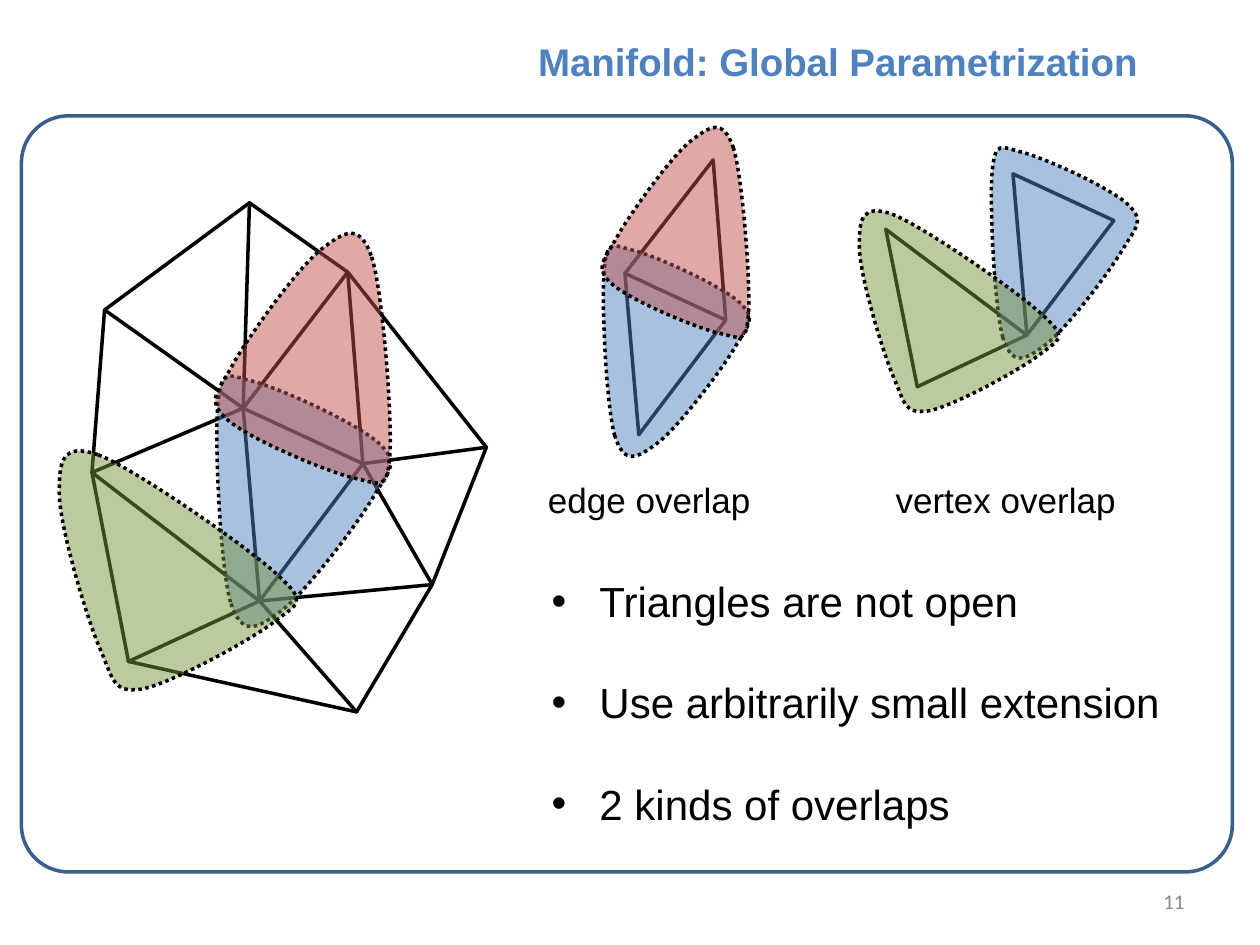
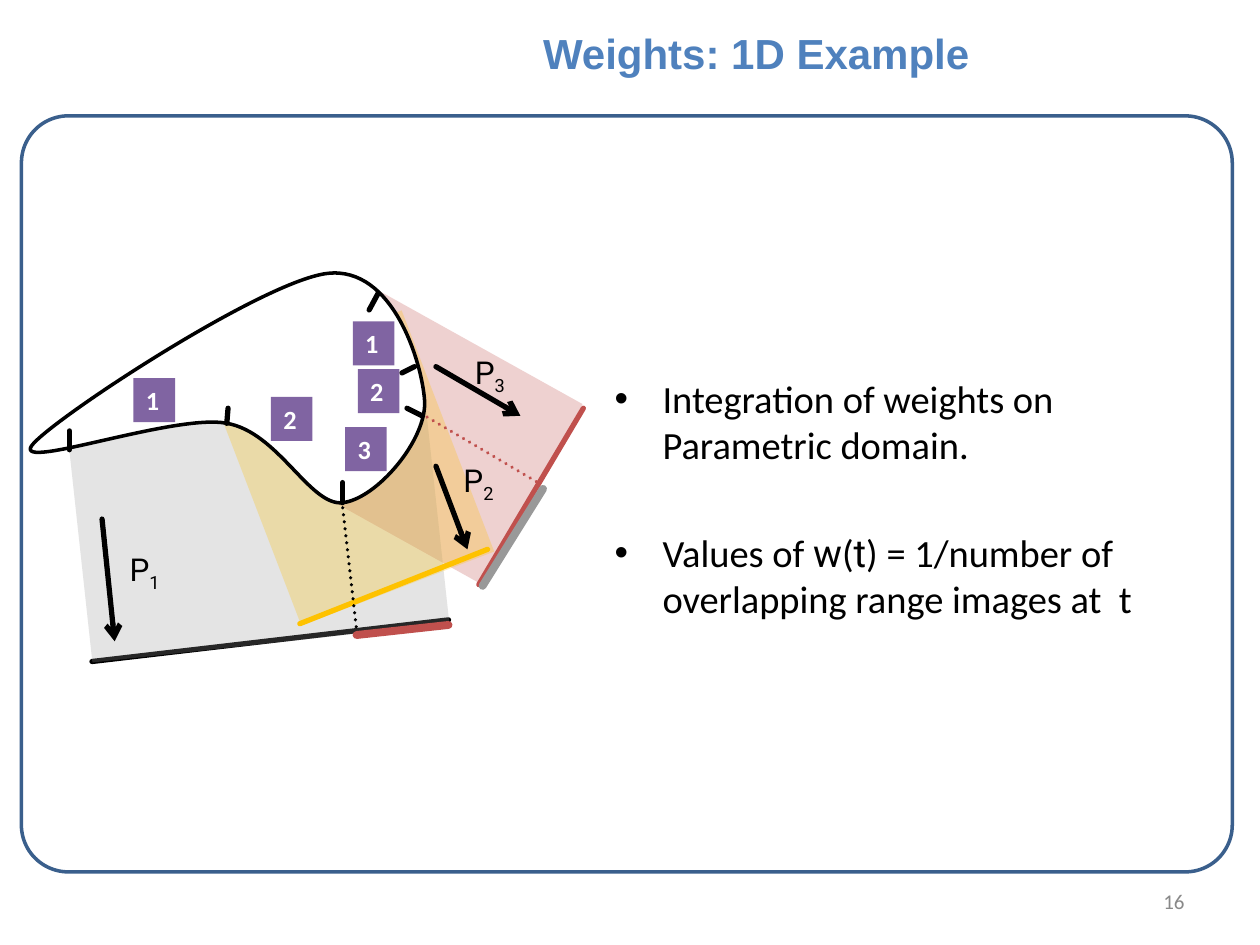
"""Build two slides on manifold parametrization and range image weights."""
import math
from dataclasses import dataclass

import lxml.etree
import pptx
import pptx.dml.color
import pptx.enum.dml
import pptx.enum.shapes
import pptx.enum.text
import pptx.oxml.ns
import pptx.util

Inches = pptx.util.Inches
qn = pptx.oxml.ns.qn


@dataclass(frozen=True)
class Theme:
    """Hold colours, fonts and type sizes."""

    black: str = "000000"
    white: str = "FFFFFF"
    title: str = "4F81BD"
    frame: str = "3A5F8C"
    number: str = "898989"
    blue: str = "4F81BD"
    red: str = "C0504D"
    green: str = "77933C"
    gray: str = "999999"
    amber: str = "FFC000"
    yellow: str = "FEC200"
    purple: str = "8064A2"
    sans: str = "Arial"
    body: str = "Calibri"
    symbol: str = "Roboto"
    number_size: int = 12
    badge_size: int = 15
    label_size: int = 18
    caption_size: int = 20
    text_size: int = 22
    large_size: int = 24
    thin: float = 2
    thick: float = 3
    heavy: float = 4.5
    chart_opacity: int = 49
    image_opacity: int = 26


THEME = Theme()

LENS = [(1.83, 4.78),
        (1.75, 4.51), (1.7, 3.49), (1.73, 3.2), (1.76, 2.91), (1.81, 2.98), (2.02, 3.03),
        (2.24, 3.09), (2.86, 3.37), (3.02, 3.53), (3.17, 3.68), (3.09, 3.73), (2.96, 3.95),
        (2.83, 4.17), (2.42, 4.71), (2.23, 4.85), (2.04, 4.99), (1.92, 5.06), (1.83, 4.78)]
SHIELD = [(0.78, 3.61),
          (1.07, 3.72), (1.98, 4.35), (2.21, 4.57), (2.45, 4.79), (2.36, 4.79), (2.17, 4.94),
          (1.99, 5.08), (1.35, 5.43), (1.12, 5.47), (0.89, 5.5), (0.9, 5.39), (0.79, 5.14),
          (0.68, 4.88), (0.47, 4.17), (0.47, 3.91), (0.47, 3.66), (0.49, 3.51), (0.78, 3.61)]
SURFACE = [(0.25, 3.54),
           (0.38, 3.35), (2.08, 2.23), (2.6, 2.17), (3.12, 2.11), (3.35, 2.88), (3.37, 3.18),
           (3.39, 3.49), (2.99, 3.96), (2.72, 3.99), (2.46, 4.02), (2.21, 3.43), (1.8, 3.36),
           (1.39, 3.28), (0.12, 3.74), (0.25, 3.54)]
MESH = {"a": (1.98, 1.61), "b": (2.76, 2.16), "c": (3.86, 3.55), "d": (3.43, 4.64),
        "e": (2.83, 5.65), "f": (1.02, 5.25), "g": (0.73, 3.75), "h": (0.83, 2.46),
        "i": (1.93, 3.24), "j": (2.88, 3.68), "k": (2.06, 4.77)}
MESH_EDGES = "ig ia hi ik ij ib bj jk kg gh ha ab cd dk bc jc jd ke kf gf fe de"
EDGE_PAIR = {"top": (5.66, 1.27), "left": (4.96, 2.17), "right": (5.76, 2.54),
             "bottom": (5.07, 3.45)}
VERTEX_PAIR = {"top": (8.04, 1.38), "right": (8.84, 1.75), "shared": (8.15, 2.66),
               "left": (7.03, 1.82), "bottom": (7.28, 3.07)}
SMALL = 0.84
TURNED = 178.4


def rgb(color):
    """Turn a hex string into a colour."""
    return pptx.dml.color.RGBColor.from_string(color)


def style_run(run, size, font, color, bold=False):
    """Format one run."""
    run.font.size = pptx.util.Pt(size)
    run.font.name = font
    run.font.color.rgb = rgb(color)
    run.font.bold = bold


def style_line(line, color, width, dotted=False):
    """Set the stroke of a line or outline."""
    line.color.rgb = rgb(color)
    line.width = pptx.util.Pt(width)
    if dotted:
        line.dash_style = pptx.enum.dml.MSO_LINE.ROUND_DOT


def style_fill(shape, color, opacity=100):
    """Give a shape a solid, possibly translucent fill without shadow."""
    shape.shadow.inherit = False
    shape.fill.solid()
    shape.fill.fore_color.rgb = rgb(color)
    if opacity < 100:
        tint = shape.fill._xPr.find(qn("a:solidFill"))[0]
        lxml.etree.SubElement(tint, qn("a:alpha"), val=str(opacity * 1000))


def add_segment(slide, start, end, color=THEME.black, width=THEME.thin,
                dotted=False, arrow=False):
    """Draw a straight line with round ends, with an arrowhead if wanted."""
    segment = slide.shapes.add_connector(
        pptx.enum.shapes.MSO_CONNECTOR.STRAIGHT, *map(Inches, start + end))
    style_line(segment.line, color, width, dotted)
    stroke = segment.line._get_or_add_ln()
    stroke.set("cap", "rnd")
    if arrow:
        lxml.etree.SubElement(stroke, qn("a:tailEnd"), type="arrow")
    lxml.etree.SubElement(segment._element.spPr, qn("a:effectLst"))


def add_edges(slide, vertices, edges):
    """Connect named vertices in pairs."""
    for start, end in edges:
        add_segment(slide, vertices[start], vertices[end])


def place(controls, anchor, scale, angle):
    """Scale and turn points about the first one, which moves to anchor."""
    x0, y0 = controls[0]
    cosine = scale * math.cos(math.radians(angle))
    sine = scale * math.sin(math.radians(angle))
    return [(anchor[0] + (x - x0) * cosine - (y - y0) * sine,
             anchor[1] + (x - x0) * sine + (y - y0) * cosine) for x, y in controls]


def bend_outline(region):
    """Turn every three straight steps of a freeform into one cubic curve."""
    outline = region._element.find(".//" + qn("a:path"))
    steps = outline.findall(qn("a:lnTo"))
    for i in range(0, len(steps), 3):
        curve = lxml.etree.Element(qn("a:cubicBezTo"))
        steps[i].addprevious(curve)
        for step in steps[i:i + 3]:
            curve.append(step[0])
            outline.remove(step)


def add_region(slide, controls, color, opacity=100, dotted=False):
    """Draw a closed outline of cubic curves."""
    points = [(Inches(x), Inches(y)) for x, y in controls]
    outline = slide.shapes.build_freeform(*points[0])
    outline.add_line_segments(points[1:], close=True)
    region = outline.convert_to_shape()
    bend_outline(region)
    style_fill(region, color, opacity)
    style_line(region.line, THEME.black, THEME.thin, dotted)


def add_block(slide, box, color, angle=0, opacity=100):
    """Draw a borderless rectangle."""
    block = slide.shapes.add_shape(
        pptx.enum.shapes.MSO_SHAPE.RECTANGLE, *map(Inches, box))
    block.rotation = angle
    style_fill(block, color, opacity)
    block.line.fill.background()
    return block


def add_label(slide, box, text, size, font, color=THEME.black):
    """Add a text box of one unwrapped line."""
    label = slide.shapes.add_textbox(*map(Inches, box))
    label.text_frame.word_wrap = False
    label.text_frame.text = text
    style_run(label.text_frame.paragraphs[0].runs[0], size, font, color)
    return label


def add_direction(slide, index, start, end, position):
    """Draw a projection arrow and its label with a subscript."""
    add_segment(slide, start, end, width=THEME.thick, arrow=True)
    label = add_label(slide, position + (0.45, 0.4), "P", THEME.label_size, THEME.symbol)
    subscript = label.text_frame.paragraphs[0].add_run()
    subscript.text = index
    style_run(subscript, THEME.label_size, THEME.symbol, THEME.black)
    subscript._r.get_or_add_rPr().set("baseline", "-25000")


def add_badge(slide, text, left, top):
    """Add a square that counts overlapping images."""
    badge = add_block(slide, (left, top, 0.33, 0.35), THEME.purple)
    frame = badge.text_frame
    frame.word_wrap = False
    frame.vertical_anchor = pptx.enum.text.MSO_ANCHOR.TOP
    frame.text = text
    frame.paragraphs[0].alignment = pptx.enum.text.PP_ALIGN.LEFT
    style_run(frame.paragraphs[0].runs[0], THEME.badge_size, THEME.body, THEME.white, True)


def add_bullets(slide, box, items, size, gap, margin):
    """Add bulleted paragraphs, each a list of text and font pairs."""
    frame = slide.shapes.add_textbox(*map(Inches, box)).text_frame
    frame.word_wrap = True
    for i, item in enumerate(items):
        paragraph = frame.add_paragraph() if i else frame.paragraphs[0]
        properties = paragraph._p.get_or_add_pPr()
        properties.set("marL", str(Inches(margin)))
        properties.set("indent", str(Inches(-0.38)))
        lxml.etree.SubElement(properties, qn("a:buFont"), typeface=THEME.sans)
        lxml.etree.SubElement(properties, qn("a:buChar"), char="•")
        if i:
            paragraph.space_before = pptx.util.Pt(gap)
        for text, font in item:
            run = paragraph.add_run()
            run.text = text
            style_run(run, size, font, THEME.black)


def add_framed_slide(deck, title, title_box, title_size, number):
    """Start a slide with its title, rounded frame and page number."""
    slide = deck.slides.add_slide(deck.slide_layouts[5])
    heading = slide.shapes.title
    heading.left, heading.top, heading.width, heading.height = map(Inches, title_box)
    heading.text_frame.text = title
    heading.text_frame.word_wrap = False
    heading.text_frame.vertical_anchor = pptx.enum.text.MSO_ANCHOR.TOP
    heading.text_frame.paragraphs[0].alignment = pptx.enum.text.PP_ALIGN.LEFT
    style_run(heading.text_frame.paragraphs[0].runs[0], title_size, THEME.sans,
              THEME.title, True)
    frame = slide.shapes.add_shape(pptx.enum.shapes.MSO_SHAPE.ROUNDED_RECTANGLE,
                                   *map(Inches, (0.17, 0.92, 9.61, 6)))
    frame.adjustments[0] = 0.062
    frame.shadow.inherit = False
    frame.fill.background()
    style_line(frame.line, THEME.frame, THEME.thin)
    page = add_label(slide, (7.17, 6.95, 2.33, 0.4), number, THEME.number_size,
                     THEME.body, THEME.number)
    page.text_frame.word_wrap = True
    page.text_frame.vertical_anchor = pptx.enum.text.MSO_ANCHOR.MIDDLE
    page.text_frame.paragraphs[0].alignment = pptx.enum.text.PP_ALIGN.RIGHT
    return slide


def build_manifold(deck):
    """Show the mesh with its charts and both kinds of overlap."""
    slide = add_framed_slide(deck, "Manifold: Global Parametrization",
                             (4.17, 0.25, 5.11, 0.47), THEME.text_size, "11")
    add_edges(slide, MESH, MESH_EDGES.split())
    add_edges(slide, EDGE_PAIR, [("left", "bottom"), ("left", "right"), ("left", "top"),
                                 ("top", "right"), ("right", "bottom")])
    add_edges(slide, VERTEX_PAIR, [("top", "shared"), ("top", "right"), ("right", "shared"),
                                   ("shared", "left"), ("shared", "bottom"),
                                   ("left", "bottom")])
    for controls, color, anchor, scale, angle in [
            (LENS, THEME.blue, (1.83, 4.78), 1, 0),
            (LENS, THEME.red, (2.95, 2.04), 1, TURNED),
            (SHIELD, THEME.green, (0.78, 3.61), 1, 0),
            (LENS, THEME.blue, (4.88, 3.46), SMALL, 0),
            (LENS, THEME.red, (5.82, 1.17), SMALL, TURNED),
            (LENS, THEME.blue, (7.96, 2.68), SMALL, 0),
            (SHIELD, THEME.green, (7.08, 1.7), SMALL, 0)]:
        add_region(slide, place(controls, anchor, scale, angle), color,
                   THEME.chart_opacity, dotted=True)
    for caption, left, width in [("edge overlap", 4.25, 1.82), ("vertex overlap", 7.01, 1.96)]:
        add_label(slide, (left, 3.75, width, 0.44), caption, THEME.caption_size, THEME.sans)
    points = ["Triangles are not open", "Use arbitrarily small extension", "2 kinds of overlaps"]
    add_bullets(slide, (3.78, 4.52, 5.66, 2.12), [[(point, THEME.sans)] for point in points],
                THEME.large_size, 29, 0.88)


def build_weights(deck):
    """Show a curve seen by three range images and its weights."""
    slide = add_framed_slide(deck, "Weights: 1D Example", (4.21, 0.17, 3.62, 0.5),
                             THEME.large_size, "16")
    add_bullets(slide, (4.78, 2.93, 4.88, 2.07), [
        [("Integration of weights on Parametric domain.", THEME.body)],
        [("Values of ", THEME.body), ("w", THEME.symbol), ("(", THEME.body),
         ("t", THEME.symbol),
         (") = 1/number of overlapping range images at  t", THEME.body)]],
        THEME.text_size, 35, 0.38)
    add_block(slide, (2.51, 2.4, 1.64, 2.05), THEME.red, 299.1, THEME.image_opacity)
    add_segment(slide, (4.63, 3.24), (3.8, 4.64), THEME.red, THEME.thick)
    add_direction(slide, "3", (3.46, 2.91), (4.13, 3.3), (3.67, 2.75))
    add_block(slide, (1.96, 2.96, 1.27, 0.71), THEME.white, 299.1)
    add_segment(slide, (0.73, 5.25), (3.56, 4.92), width=THEME.thick)
    add_block(slide, (1.07, 2.71, 1.95, 2.85), THEME.gray, 263.8, THEME.image_opacity)
    add_direction(slide, "1", (0.81, 4.12), (0.91, 5.09), (0.93, 4.32))
    add_block(slide, (1.97, 2.69, 1.64, 2.05), THEME.amber, 339, THEME.image_opacity)
    add_segment(slide, (2.38, 4.95), (3.87, 4.36), THEME.yellow, THEME.thick)
    add_direction(slide, "2", (3.46, 3.7), (3.71, 4.36), (3.58, 3.61))
    add_segment(slide, (3.39, 3.31), (4.27, 3.83), THEME.red, dotted=True)
    add_segment(slide, (2.72, 4.03), (2.83, 5), dotted=True)
    add_segment(slide, (3.56, 4.96), (2.83, 5.04), THEME.red, THEME.heavy)
    add_segment(slide, (4.31, 3.88), (3.83, 4.65), THEME.gray, THEME.heavy)
    add_region(slide, SURFACE, THEME.white)
    for start, end in [((1.8, 3.36), (1.81, 3.24)), ((2.72, 3.99), (2.72, 3.83)),
                       ((3.23, 3.24), (3.35, 3.3)), ((3, 2.33), (2.93, 2.46)),
                       ((3.29, 2.91), (3.19, 2.96)), ((0.55, 3.57), (0.55, 3.42))]:
        add_segment(slide, start, end, width=THEME.thick)
    for count, left, top in [("1", 1.06, 3), ("2", 2.15, 3.15), ("3", 2.74, 3.39),
                             ("2", 2.84, 2.93), ("1", 2.8, 2.55)]:
        add_badge(slide, count, left, top)


def main():
    """Build and save the deck."""
    deck = pptx.Presentation()
    deck.slide_width, deck.slide_height = Inches(10), Inches(7.5)
    build_manifold(deck)
    build_weights(deck)
    deck.save("out.pptx")


if __name__ == "__main__":
    main()
